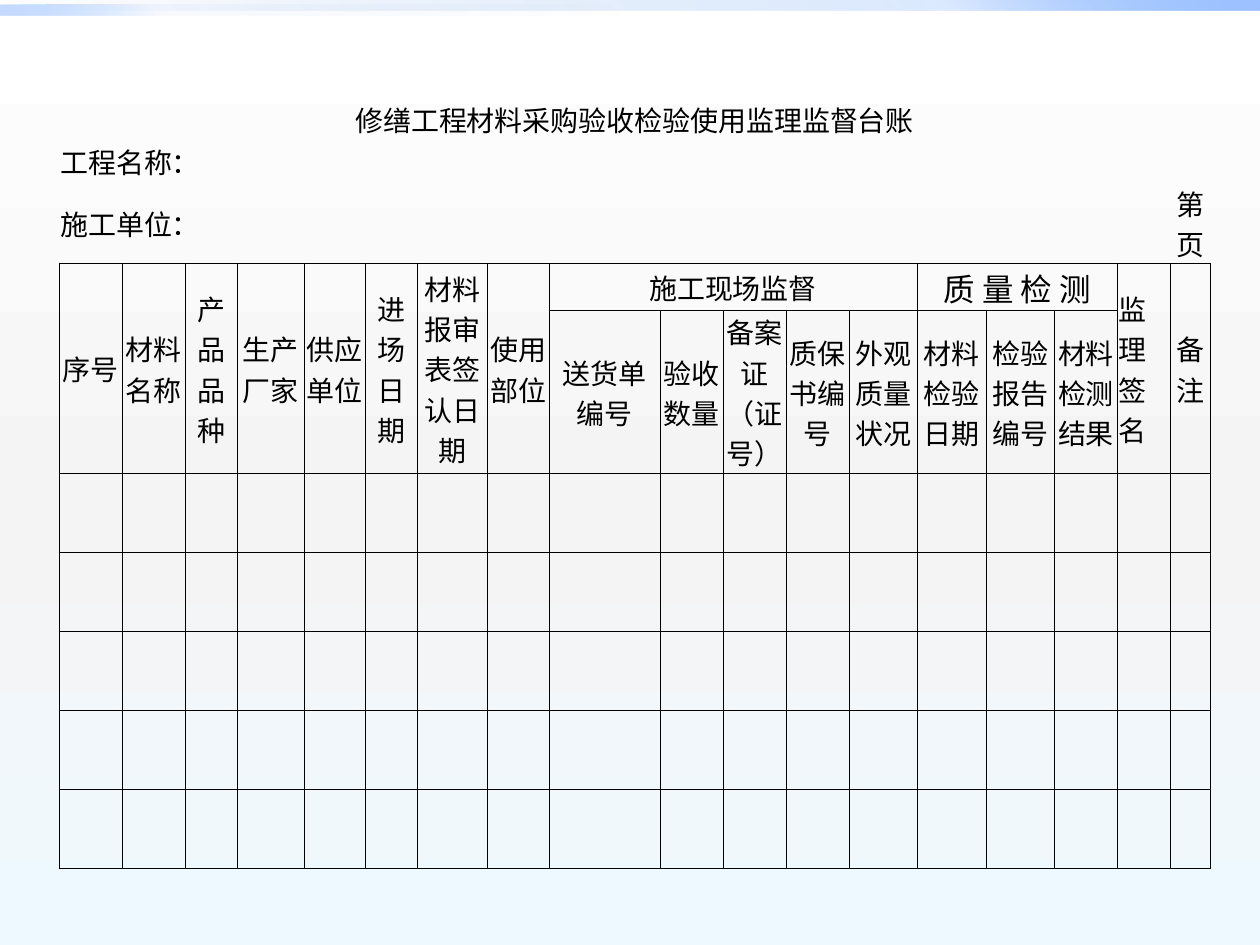
from lxml.etree import SubElement
from pptx import Presentation
from pptx.dml.color import RGBColor
from pptx.enum.shapes import MSO_SHAPE
from pptx.enum.text import MSO_ANCHOR, PP_ALIGN
from pptx.oxml.ns import qn
from pptx.util import Pt

COLORS = {
    "ink": "000000", "white": "FFFFFF", "mist": "F4F4F4", "ice": "EEF9FF",
    "deep": "0058B7", "blue": "4F95FF", "sky": "9EC2FF",
}
FONT = "Noto Sans CJK SC"
LATIN_FONT = "Cambria"
COLUMN_WIDTHS = [36, 36, 30, 38, 35, 30, 40, 35, 63.4, 36, 36, 36, 39, 39.5, 39, 36, 30, 23]
ROW_HEIGHTS = [16, 15, 15, 22, 43] + [45.25] * 5
TITLE_ROW, PROJECT_ROW, CONTRACTOR_ROW, GROUP_ROW, FIELD_ROW = range(5)
LAST_COLUMN = len(COLUMN_WIDTHS) - 1
TITLE_RUNS = [("修缮工程材料", FONT), ("采购验收检验使用", LATIN_FONT), ("监理监督台账", FONT)]
TALL_HEADINGS = ["序号", "材料名称", "产品品种", "生产厂家", "供应单位", "进场日期",
                 "材料报审表签认日期", "使用部位"]
SITE_FIELDS = ["送货单编号", "验收\v数量", "备案证\n（证号）", "质保书编号", "外观质量状况"]
TEST_FIELDS = ["材料检验日期", "检验报告编号", "材料检测结果"]


def paint_gradient(fill, owner, stops, angle):
    """Fill with (position, colour, opacity) stops along a clockwise angle."""
    fill.gradient()
    fill.gradient_angle = (360 - angle) % 360
    stop_list = owner.find(".//" + qn("a:gsLst"))
    for stop in list(stop_list):
        stop_list.remove(stop)
    for position, color, opacity in stops:
        stop = SubElement(stop_list, qn("a:gs"), pos=str(position * 1000))
        tint = SubElement(stop, qn("a:srgbClr"), val=COLORS[color])
        if opacity < 100:
            SubElement(tint, qn("a:alpha"), val=str(opacity * 1000))


def add_top_bar(slide, left, top, width, height, stops, angle):
    """Add one gradient strip at the top edge."""
    bar = slide.shapes.add_shape(MSO_SHAPE.RECTANGLE, Pt(left), Pt(top), Pt(width), Pt(height))
    bar.shadow.inherit = False
    bar.line.fill.background()
    paint_gradient(bar.fill, bar._element, stops, angle)


def format_paragraph(paragraph, align, size=16, name=FONT):
    """Set the alignment and font of a paragraph."""
    paragraph.alignment = align
    font = paragraph.font
    font.size = Pt(size)
    font.name = name
    font.color.rgb = RGBColor.from_string(COLORS["ink"])
    SubElement(font._element.find(".//" + qn("a:defRPr")) if font._element.tag != qn("a:defRPr")
               else font._element, qn("a:ea"), typeface=FONT) if hasattr(font, "_element") else \
        SubElement(font._rPr, qn("a:ea"), typeface=FONT)


def write(cell, text, align=PP_ALIGN.CENTER, **font):
    """Put text in a cell and format each paragraph."""
    cell.text = text
    for paragraph in cell.text_frame.paragraphs:
        format_paragraph(paragraph, align, **font)


def write_runs(cell, parts):
    """Write (text, font name) parts as runs of one centred paragraph."""
    write(cell, "")
    paragraph = cell.text_frame.paragraphs[0]
    for text, name in parts:
        run = paragraph.add_run()
        run.text = text
        run.font.name = name
    return paragraph.runs


def format_cell(cell, ruled_sides):
    """Set margins, borders and a clear fill."""
    cell.margin_left = cell.margin_top = cell.margin_right = Pt(0.75)
    cell.margin_bottom = Pt(0)
    cell.vertical_anchor = MSO_ANCHOR.MIDDLE
    properties = cell._tc.get_or_add_tcPr()
    for side in "LRTB":
        line = SubElement(properties, qn("a:ln" + side), w=str(Pt(0.5)))
        if side in ruled_sides:
            solid = SubElement(line, qn("a:solidFill"))
            SubElement(solid, qn("a:srgbClr"), val=COLORS["ink"])
        else:
            SubElement(line, qn("a:noFill"))
    cell.fill.background()


def write_headings(table):
    """Fill the title rows and the two-level column headings."""
    table.cell(TITLE_ROW, 0).merge(table.cell(TITLE_ROW, LAST_COLUMN))
    write_runs(table.cell(TITLE_ROW, 0), TITLE_RUNS)
    for row, label in ((PROJECT_ROW, "工程名称："), (CONTRACTOR_ROW, "施工单位：")):
        table.cell(row, 0).merge(table.cell(row, 1))
        write(table.cell(row, 0), label, PP_ALIGN.LEFT)
    page_runs = write_runs(table.cell(CONTRACTOR_ROW, LAST_COLUMN),
                           [(text, FONT) for text in ("第", " ", "页")])
    page_runs[1].font.underline = True

    tall = list(enumerate(TALL_HEADINGS)) + [(LAST_COLUMN - 1, "监理\n签名"), (LAST_COLUMN, "备注")]
    for column, heading in tall:
        table.cell(GROUP_ROW, column).merge(table.cell(FIELD_ROW, column))
        align = PP_ALIGN.LEFT if column == LAST_COLUMN - 1 else PP_ALIGN.CENTER
        write(table.cell(GROUP_ROW, column), heading, align)

    column = len(TALL_HEADINGS)
    groups = [("施工现场监督", SITE_FIELDS, {}),
              ("质 量 检 测", TEST_FIELDS, {"size": 18, "name": LATIN_FONT})]
    for heading, fields, font in groups:
        table.cell(GROUP_ROW, column).merge(table.cell(GROUP_ROW, column + len(fields) - 1))
        write(table.cell(GROUP_ROW, column), heading, **font)
        for offset, field in enumerate(fields):
            write(table.cell(FIELD_ROW, column + offset), field)
        column += len(fields)


def add_ledger(slide, left, top):
    """Add the inspection ledger table."""
    frame = slide.shapes.add_table(len(ROW_HEIGHTS), len(COLUMN_WIDTHS), Pt(left), Pt(top),
                                   Pt(sum(COLUMN_WIDTHS)), Pt(sum(ROW_HEIGHTS)))
    table = frame.table
    table.first_row = table.horz_banding = False
    for column, width in zip(table.columns, COLUMN_WIDTHS):
        column.width = Pt(width)
    for index, (row, height) in enumerate(zip(table.rows, ROW_HEIGHTS)):
        row.height = Pt(height)
        sides = "LRTB" if index >= GROUP_ROW else "B" if index == CONTRACTOR_ROW else ""
        for cell in row.cells:
            format_cell(cell, sides)
            write(cell, "")
    write_headings(table)


def main():
    """Build and save the ledger slide."""
    presentation = Presentation()
    presentation.slide_width, presentation.slide_height = Pt(720), Pt(540)
    slide = presentation.slides.add_slide(presentation.slide_layouts[6])
    paint_gradient(slide.background.fill, slide._element,
                   [(0, "white", 100), (55, "mist", 100), (100, "ice", 100)], 90)
    add_top_bar(slide, 0, 0, 720, 5.75,
                [(0, "deep", 0), (75, "blue", 20), (100, "sky", 100)], 315)
    add_top_bar(slide, 0, 2.9, 360, 5.75,
                [(0, "deep", 0), (75, "blue", 5), (100, "sky", 60)], 135)
    add_ledger(slide, 33.8, 56)
    presentation.save("out.pptx")


if __name__ == "__main__":
    main()
